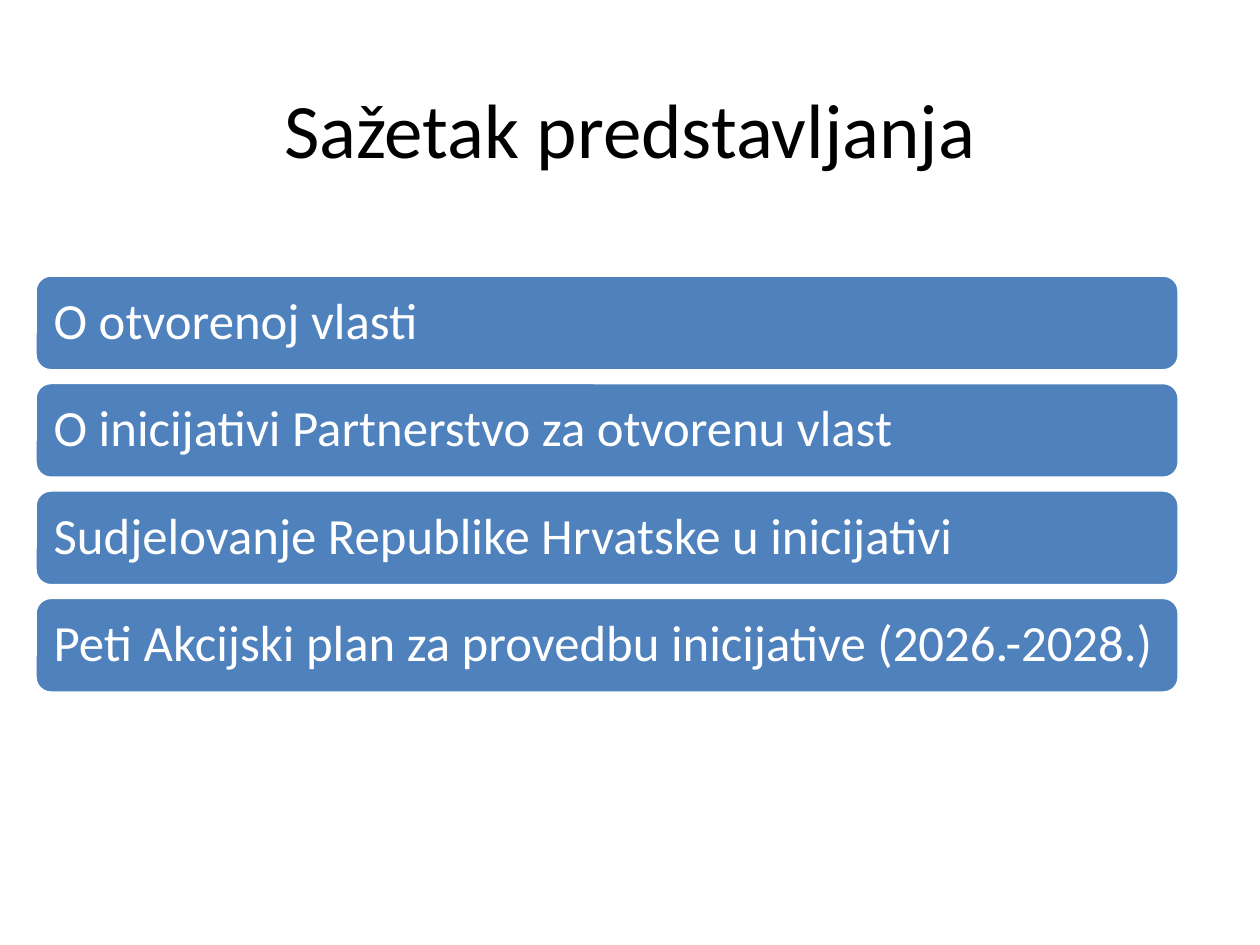
"""Build the summary slide: a title above a stack of rounded topic bars."""
from pptx import Presentation
from pptx.dml.color import RGBColor
from pptx.enum.shapes import MSO_SHAPE
from pptx.enum.text import MSO_ANCHOR, PP_ALIGN
from pptx.util import Pt

HEADING = "Sažetak predstavljanja"
TOPICS = [
    "O otvorenoj vlasti",
    "O inicijativi Partnerstvo za otvorenu vlast",
    "Sudjelovanje Republike Hrvatske u inicijativi",
    "Peti Akcijski plan za provedbu inicijative (2026.-2028.)",
]

FONT = "Calibri"
BLACK = RGBColor(0x00, 0x00, 0x00)
WHITE = RGBColor(0xFF, 0xFF, 0xFF)
BLUE = RGBColor(0x4F, 0x81, 0xBD)

BAR_LEFT, BAR_TOP = 20, 157.2
BAR_WIDTH, BAR_HEIGHT = 653.8, 54.7
BAR_PITCH = 61.4
INSET_LEFT, INSET_RIGHT = 8, 6


def write(frame, words, size, color, align):
    frame.word_wrap = True
    frame.vertical_anchor = MSO_ANCHOR.MIDDLE
    paragraph = frame.paragraphs[0]
    paragraph.alignment = align
    run = paragraph.add_run()
    run.text = words
    run.font.name = FONT
    run.font.size = Pt(size)
    run.font.color.rgb = color
    return paragraph


def add_topic(slide, topic, top):
    bar = slide.shapes.add_shape(
        MSO_SHAPE.ROUNDED_RECTANGLE,
        Pt(BAR_LEFT), Pt(top), Pt(BAR_WIDTH), Pt(BAR_HEIGHT),
    )
    bar.shadow.inherit = False
    bar.fill.solid()
    bar.fill.fore_color.rgb = BLUE
    bar.line.color.rgb = WHITE
    bar.line.width = Pt(2)
    frame = bar.text_frame
    frame.margin_left, frame.margin_right = Pt(INSET_LEFT), Pt(INSET_RIGHT)
    write(frame, topic, 29, WHITE, PP_ALIGN.LEFT).line_spacing = 0.9


def main():
    deck = Presentation()
    deck.slide_width, deck.slide_height = Pt(720), Pt(540)
    slide = deck.slides.add_slide(deck.slide_layouts[5])

    title = slide.shapes.title
    title.left, title.top = Pt(54), Pt(15)
    title.width, title.height = Pt(612), Pt(116)
    write(title.text_frame, HEADING, 44, BLACK, PP_ALIGN.CENTER)

    for row, topic in enumerate(TOPICS):
        add_topic(slide, topic, BAR_TOP + row * BAR_PITCH)

    deck.save("out.pptx")


if __name__ == "__main__":
    main()
